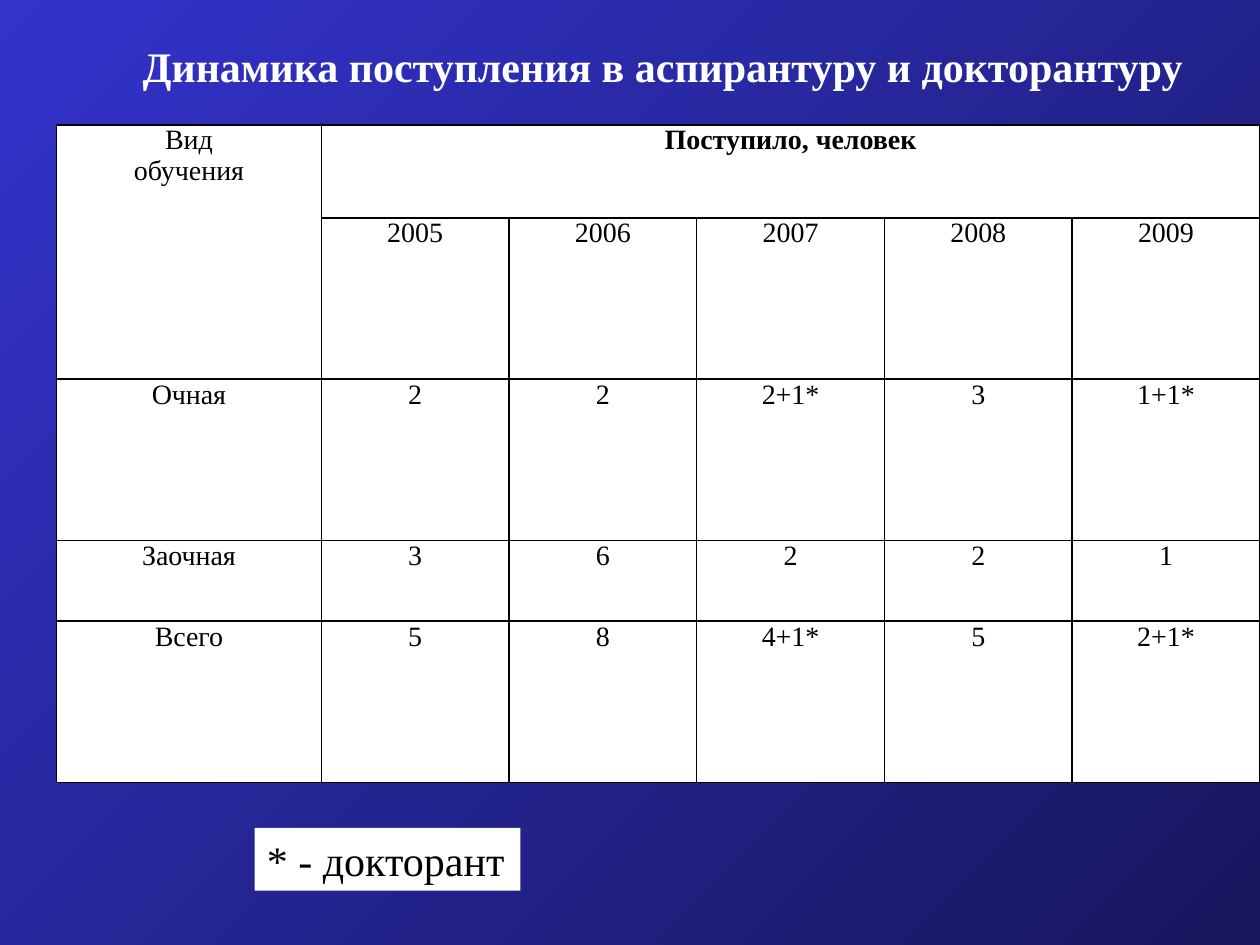
import pptx
import pptx.util
import pptx.dml.color
import pptx.enum.text
import pptx.enum.shapes
import pptx.oxml
import pptx.oxml.ns

# Content
TITLE = "Динамика поступления в аспирантуру и докторантуру"
NOTE = "* - докторант"
HEAD = ["Вид\nобучения", "Поступило, человек"]
YEARS = ["2005", "2006", "2007", "2008", "2009"]
ROWS = [
    ["Очная", "2", "2", "2+1*", "3", "1+1*"],
    ["Заочная", "3", "6", "2", "2", "1"],
    ["Всего", "5", "8", "4+1*", "5", "2+1*"],
]

# Layout in inches
WIDE, HIGH = 10, 7.5
LEFT, TOP = 0.45, 0.99
FIRST = 2.1
UNIT = 0.64
COLS = [FIRST] + [(WIDE - LEFT - FIRST) / len(YEARS)] * len(YEARS)
TALL = [0.74, 2 * UNIT, 2 * UNIT, UNIT, 2 * UNIT]

FONT = "Times New Roman"
BLACK, WHITE = "000000", "FFFFFF"
BLUE, NAVY = "3333CC", "17175E"
CENTER = pptx.enum.text.PP_ALIGN.CENTER
Inches = pptx.util.Inches


def color(code):
    return pptx.dml.color.RGBColor.from_string(code)


def style(frame, size, code=BLACK, bold=False, align=None):
    for par in frame.paragraphs:
        par.alignment = align
        par.font.name = FONT
        par.font.size = pptx.util.Pt(size)
        par.font.bold = bold
        par.font.color.rgb = color(code)


def paint(item, code):
    item.fill.solid()
    item.fill.fore_color.rgb = color(code)


def border(cell):
    props = cell._tc.get_or_add_tcPr()
    for side in "LRTB":
        props.append(pptx.oxml.parse_xml(
            f'<a:ln{side} {pptx.oxml.ns.nsdecls("a")} w="12700"><a:solidFill>'
            f'<a:srgbClr val="{BLACK}"/></a:solidFill></a:ln{side}>'))


deck = pptx.Presentation()
deck.slide_width, deck.slide_height = Inches(WIDE), Inches(HIGH)
slide = deck.slides.add_slide(deck.slide_layouts[6])

# Background, from top left to bottom right
back = slide.background.fill
back.gradient()
back.gradient_angle = 315
for stop, code in zip(back.gradient_stops, [BLUE, NAVY]):
    stop.color.rgb = color(code)
    stop.position = 0 if code == BLUE else 1

# Title
box = slide.shapes.add_textbox(*map(Inches, (0.71, 0.27, 9.1, 0.5)))
box.text_frame.word_wrap = True
box.text_frame.text = TITLE
style(box.text_frame, 24, WHITE, True, CENTER)

# Table
grid = [HEAD + [""] * (len(YEARS) - 1), [""] + YEARS] + ROWS
table = slide.shapes.add_table(
    len(TALL), len(COLS),
    *map(Inches, (LEFT, TOP, sum(COLS), sum(TALL)))).table
for col, width in zip(table.columns, COLS):
    col.width = Inches(width)
for row, height in zip(table.rows, TALL):
    row.height = Inches(height)
for r, line in enumerate(grid):
    for c, text in enumerate(line):
        cell = table.cell(r, c)
        cell.text = text
        cell.margin_left = cell.margin_right = Inches(0.07)
        cell.margin_top = cell.margin_bottom = 0
        border(cell)
        paint(cell, WHITE)
        style(cell.text_frame, 16, bold=text == HEAD[1], align=CENTER)
table.cell(0, 0).merge(table.cell(1, 0))
table.cell(0, 1).merge(table.cell(0, len(YEARS)))

# Footnote
note = slide.shapes.add_shape(
    pptx.enum.shapes.MSO_SHAPE.RECTANGLE,
    *map(Inches, (2.02, 6.57, 2.11, 0.5)))
note.shadow.inherit = False
paint(note, WHITE)
note.line.fill.background()
note.text_frame.word_wrap = False
note.text_frame.text = NOTE
style(note.text_frame, 24, align=pptx.enum.text.PP_ALIGN.LEFT)

deck.save("out.pptx")
